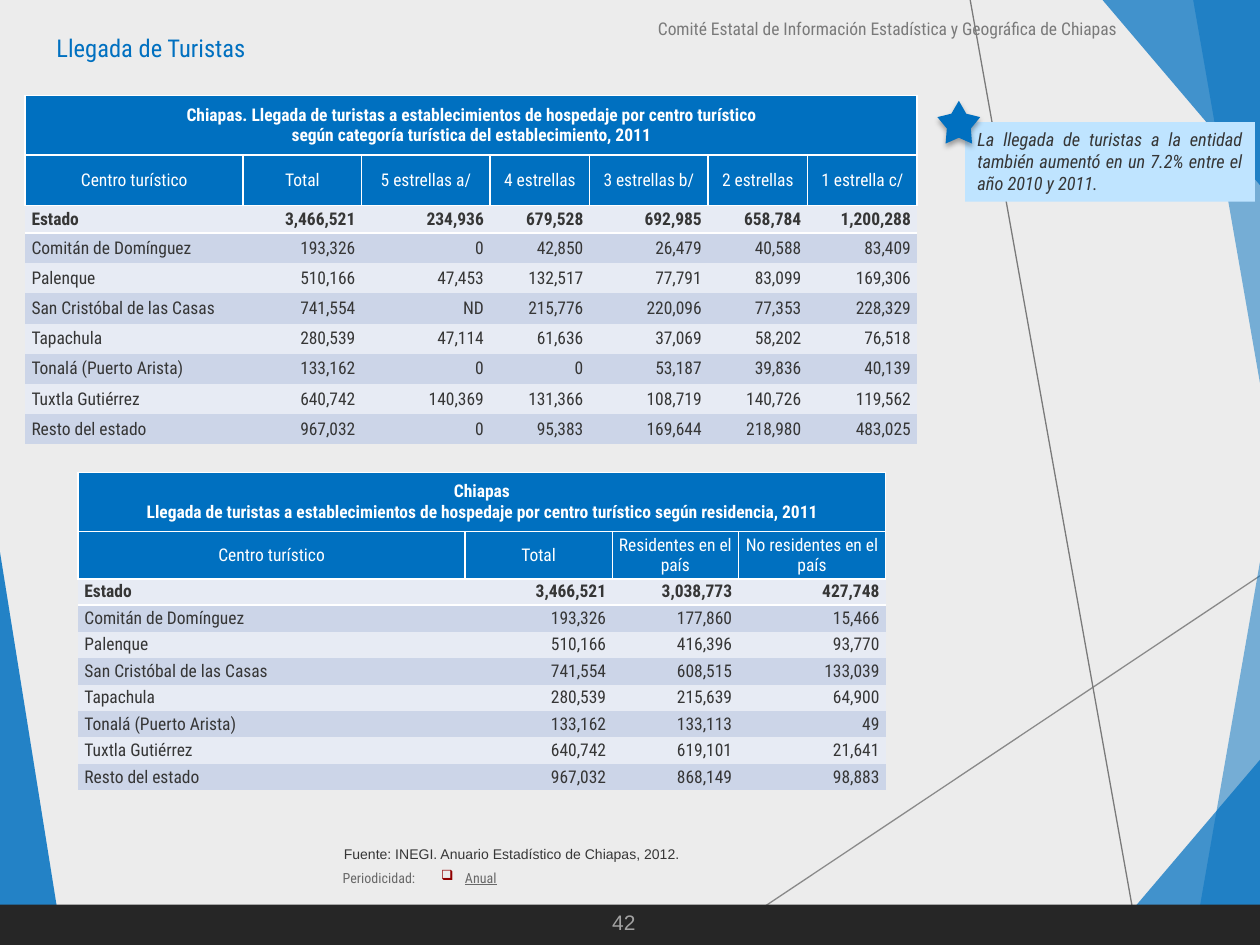
"""Build the slide on tourist arrivals in Chiapas, with two tables and a callout."""
from lxml.etree import SubElement as Sub
from pptx import Presentation
from pptx.dml.color import RGBColor as Rgb
from pptx.enum.shapes import MSO_CONNECTOR as Link, MSO_SHAPE as Kind
from pptx.enum.text import MSO_ANCHOR as Anchor, MSO_AUTO_SIZE as Fit, PP_ALIGN as Align
from pptx.oxml.ns import qn
from pptx.util import Inches, Pt

HUES = {
    "back": "ECECEC", "blue": "0070C0", "pale": "BFE4FF", "bar": "262626",
    "white": "FFFFFF", "ink": "363636", "light": "E7EBF4", "band": "CCD5E8",
    "head": "7A7A7A", "page": "A2A2A2", "note": "686868", "slant": "8A8A8A",
    "mark": "900000", "black": "000000",
}
MAIN, PLAIN = "Roboto Condensed", "Arial"
NO_STYLE = "{2D5ABB26-0587-4C30-8999-92F81FD0307C}"

WEDGES = [
    ([(0, 4.38), (0.5, 7.5), (0, 7.49)], 85),
    ([(8.75, 7.5), (10, 6.03), (10, 7.5)], 72),
    ([(9.47, 7.5), (10, 4.46), (10, 7.5)], 50),
    ([(8.75, 0), (10, 1.47), (10, 0)], 72),
    ([(9.47, 0), (10, 3.04), (10, 0)], 50),
]
LINES = [((5.61, 7.5), (10, 4.57), "slant"), ((7.7, 0), (9.04, 7.5), "head")]

PLACES = ["Estado", "Comitán de Domínguez", "Palenque", "San Cristóbal de las Casas",
          "Tapachula", "Tonalá (Puerto Arista)", "Tuxtla Gutiérrez", "Resto del estado"]
TOTALS = ["3,466,521", "193,326", "510,166", "741,554",
          "280,539", "133,162", "640,742", "967,032"]
TABLES = [
    {
        "at": (0.2, 0.76), "cols": [1.73, 0.94, 1.02, 0.79, 0.94, 0.79, 0.87],
        "rows": [0.47, 0.4, 0.22] + [0.24] * 7, "pad": 0,
        "title": ["Chiapas. Llegada de turistas a establecimientos de hospedaje por centro turístico",
                  "según categoría turística del establecimiento, 2011"],
        "heads": ["Centro turístico", "Total", "5 estrellas a/", "4 estrellas",
                  "3 estrellas b/", "2 estrellas", "1 estrella c/"],
        "data": [
            ["234,936", "679,528", "692,985", "658,784", "1,200,288"],
            ["0", "42,850", "26,479", "40,588", "83,409"],
            ["47,453", "132,517", "77,791", "83,099", "169,306"],
            ["ND", "215,776", "220,096", "77,353", "228,329"],
            ["47,114", "61,636", "37,069", "58,202", "76,518"],
            ["0", "0", "53,187", "39,836", "40,139"],
            ["140,369", "131,366", "108,719", "140,726", "119,562"],
            ["0", "95,383", "169,644", "218,980", "483,025"],
        ],
    },
    {
        "at": (0.62, 3.75), "cols": [3.07, 1.17, 1, 1.17],
        "rows": [0.47, 0.37] + [0.21] * 8, "pad": 0.02,
        "title": ["Chiapas", "Llegada de turistas a establecimientos de hospedaje "
                  "por centro turístico según residencia, 2011"],
        "heads": ["Centro turístico", "Total", "Residentes en el país",
                  "No residentes en el país"],
        "data": [
            ["3,038,773", "427,748"], ["177,860", "15,466"], ["416,396", "93,770"],
            ["608,515", "133,039"], ["215,639", "64,900"], ["133,113", "49"],
            ["619,101", "21,641"], ["868,149", "98,883"],
        ],
    },
]

deck = Presentation()
deck.slide_width, deck.slide_height = Inches(10), Inches(7.5)
slide = deck.slides.add_slide(deck.slide_layouts[6])
shapes = slide.shapes


def tint(fill, hue):
    fill.solid()
    fill.fore_color.rgb = Rgb.from_string(HUES[hue])


def write(par, text, hue, size=10, font=MAIN, align=Align.LEFT, **looks):
    par.alignment = align
    run = par.add_run()
    run.text = text
    run.font.name, run.font.size = font, Pt(size)
    run.font.color.rgb = Rgb.from_string(HUES[hue])
    for name, value in looks.items():
        setattr(run.font, name, value)


def block(kind, spot, hue):
    shape = shapes.add_shape(kind, *map(Inches, spot))
    shape.shadow.inherit = False
    tint(shape.fill, hue)
    shape.line.fill.background()
    return shape


def label(shape, text, hue, size, wrap=True, pad=None, grow=True, **looks):
    frame = shape.text_frame
    frame.word_wrap = wrap
    frame.auto_size = Fit.SHAPE_TO_FIT_TEXT if grow else Fit.NONE
    frame.vertical_anchor = Anchor.TOP
    if pad is not None:
        frame.margin_left = frame.margin_right = Inches(pad)
        frame.margin_top = frame.margin_bottom = Inches(pad)
    write(frame.paragraphs[0], text, hue, size, **looks)


def box(spot, *args, **opts):
    label(shapes.add_textbox(*map(Inches, spot)), *args, **opts)


def wedge(points, alpha):
    build = shapes.build_freeform(*map(Inches, points[0]))
    build.add_line_segments([tuple(map(Inches, p)) for p in points[1:]], close=True)
    shape = build.convert_to_shape()
    shape.shadow.inherit = False
    tint(shape.fill, "blue")
    shape.line.fill.background()
    color = shape.fill._xPr.find(".//" + qn("a:srgbClr"))
    Sub(color, qn("a:alpha"), val=str(alpha * 1000))


def stroke(start, end, hue):
    line = shapes.add_connector(Link.STRAIGHT, *map(Inches, start + end))
    line.line.color.rgb = Rgb.from_string(HUES[hue])
    line.line.width = Pt(0.75)
    Sub(line._element.spPr, qn("a:effectLst"))


def style(cell, hue, sides, pad):
    props = cell._tc.get_or_add_tcPr()
    for side in sides:
        edge = Sub(props, qn("a:ln" + side), w=str(Pt(1)))
        Sub(Sub(edge, qn("a:solidFill")), qn("a:srgbClr"), val=HUES["white"])
    tint(cell.fill, hue)
    cell.margin_left = cell.margin_right = Inches(0.05)
    cell.margin_top = cell.margin_bottom = Inches(pad)
    cell.vertical_anchor = Anchor.MIDDLE


def grid(at, cols, rows, pad, title, heads, data):
    size = sum(cols), sum(rows)
    table = shapes.add_table(len(rows), len(cols), *map(Inches, at + size)).table
    table.first_row = table.horz_banding = False
    table._tbl.tblPr.find(qn("a:tableStyleId")).text = NO_STYLE
    for col, width in zip(table.columns, cols):
        col.width = Inches(width)
    for row, height in zip(table.rows, rows):
        row.height = Inches(height)
    body = [[place, total] + rest for place, total, rest in zip(PLACES, TOTALS, data)]
    for r in range(len(rows)):
        hue = "blue" if r < 2 else ("light", "band")[r % 2]
        sides = "LRTB" if r < 2 else "T" if r == 2 else ""
        for c in range(len(cols)):
            style(table.cell(r, c), hue, sides, pad)
    top = table.cell(0, 0)
    top.merge(table.cell(0, len(cols) - 1))
    frame = top.text_frame
    for i, text in enumerate(title):
        par = frame.add_paragraph() if i else frame.paragraphs[0]
        write(par, text, "white", align=Align.CENTER, bold=True)
    for r, texts in enumerate([heads] + body, 1):
        for c, text in enumerate(texts):
            align = Align.CENTER if r == 1 else Align.RIGHT if c else Align.LEFT
            write(table.cell(r, c).text_frame.paragraphs[0], text,
                  "white" if r == 1 else "ink", align=align, bold=r == 2)


tint(slide.background.fill, "back")
wedge(*WEDGES[0])
for item in LINES:
    stroke(*item)
for item in WEDGES[1:]:
    wedge(*item)
block(Kind.RECTANGLE, (0, 7.18, 10, 0.32), "bar")
box((4.45, 0.09, 4.51, 0.27), "Comité Estatal de Información Estadística y Geográfica de Chiapas",
    "head", 10, align=Align.RIGHT)
box((4.76, 7.17, 0.39, 0.3), "42", "page", 12, wrap=False, font=PLAIN)
label(block(Kind.RECTANGLE, (7.66, 0.97, 2.3, 0.63), "pale"),
      "La llegada de turistas a la entidad también aumentó en un 7.2% entre el año 2010 y 2011.",
      "ink", 10.5, align=Align.JUSTIFY, italic=True)
for item in TABLES:
    grid(**item)
box((0.35, 0.21, 4.17, 0.44), "Llegada de Turistas", "blue", 14, grow=False)

star = block(Kind.STAR_5_POINT, (7.44, 0.8, 0.34, 0.34), "blue")
star.adjustments[0] = 0.28
shade = Sub(star._element.spPr.find(qn("a:effectLst")), qn("a:outerShdw"),
            blurRad=str(Pt(3.1)), dist=str(Pt(1.8)), dir="5400000", rotWithShape="0")
Sub(Sub(shade, qn("a:srgbClr"), val=HUES["black"]), qn("a:alpha"), val="35000")

box((2.63, 6.66, 2.99, 0.24), "Fuente: INEGI. Anuario Estadístico de Chiapas, 2012.",
    "ink", 8, font=PLAIN)
label(block(Kind.RECTANGLE, (2.72, 6.9, 0.67, 0.13), "back"), "Periodicidad:",
      "note", 8, wrap=False, pad=0)
term = block(Kind.RECTANGLE, (3.5, 6.9, 0.48, 0.13), "back")
props = term.text_frame.paragraphs[0]._p.get_or_add_pPr()
props.set("marL", str(Inches(0.19)))
props.set("indent", str(-Inches(0.19)))
Sub(Sub(props, qn("a:buClr")), qn("a:srgbClr"), val=HUES["mark"])
Sub(props, qn("a:buChar"), char="❑")
label(term, "Anual", "note", 8, wrap=False, pad=0, underline=True)

deck.save("out.pptx")
